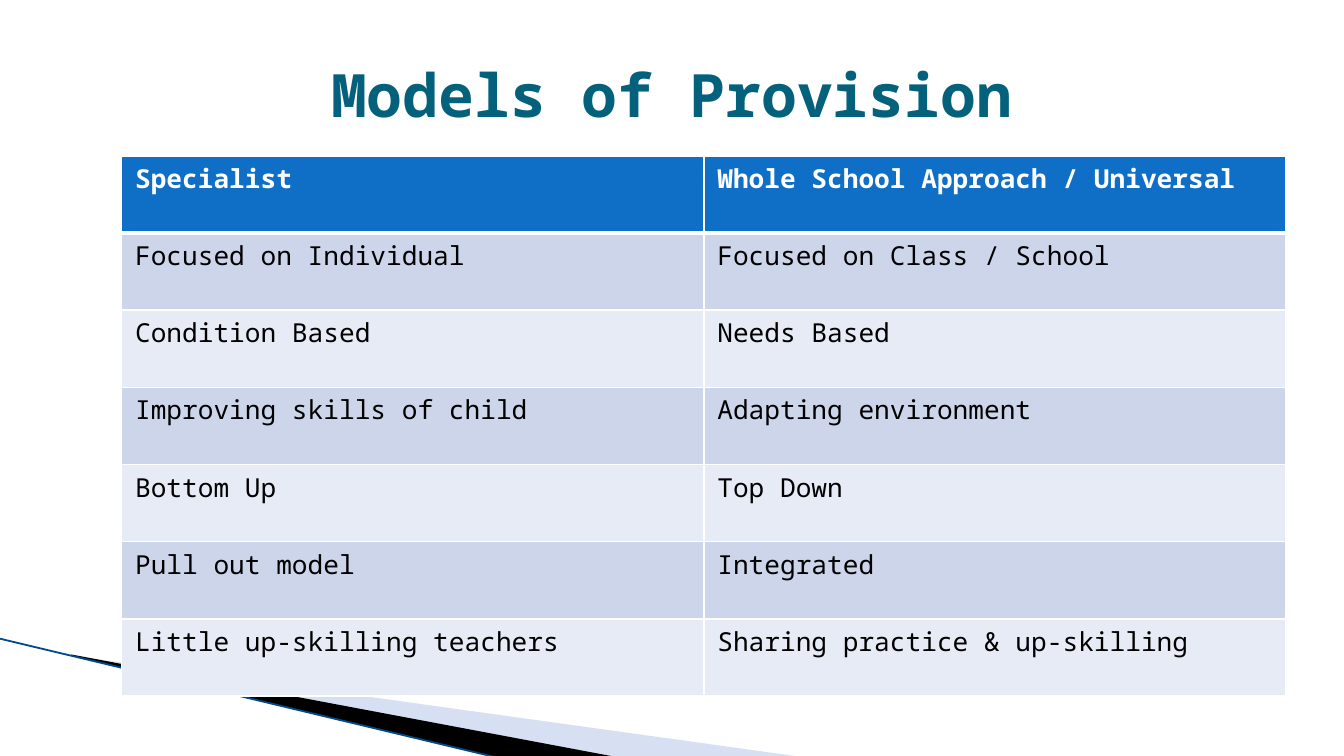
from dataclasses import dataclass
from typing import Any

from lxml import etree
from pptx import Presentation
from pptx import util as u
from pptx.dml.color import RGBColor
from pptx.enum import shapes, text
from pptx.oxml import ns

PX = 4572


@dataclass(frozen=True)
class Theme:
    font: str = "Noto Sans Mono"
    title: str = "04617B"
    header: str = "0F6FC6"
    bands: tuple[str, str] = ("CCD5EA", "E7EBF5")
    light: str = "FFFFFF"
    dark: str = "000000"
    wedge: str = "9DB2E1"
    edge: str = "004A8C"
    title_size: int = 32
    table_size: int = 14
    rule: int = 1
    header_rule: int = 3
    edge_width: float = 0.95


@dataclass(frozen=True)
class Box:
    left: int
    top: int
    width: int
    height: int

    def emu(self) -> tuple[int, ...]:
        return tuple(n * PX for n in (self.left, self.top, self.width, self.height))


@dataclass(frozen=True)
class Wedge:
    points: tuple[tuple[int, int], ...]
    color: str
    opacity: int = 100


@dataclass(frozen=True)
class Comparison:
    specialist: str
    universal: str


THEME = Theme()
WEDGES = (
    Wedge(((110, 976), (1190, 1126), (912, 1126)), THEME.wedge, 40),
    Wedge(((106, 974), (914, 1126), (744, 1128), (108, 976)), THEME.dark),
)
COMPARISONS = (
    Comparison("Specialist", "Whole School Approach / Universal"),
    Comparison("Focused on Individual", "Focused on Class / School"),
    Comparison("Condition Based", "Needs Based"),
    Comparison("Improving skills of child", "Adapting environment"),
    Comparison("Bottom Up", "Top Down"),
    Comparison("Pull out model", "Integrated"),
    Comparison("Little up-skilling teachers", "Sharing practice & up-skilling"),
)


def apply(target: Any, values: dict[str, Any]) -> None:
    for key, value in values.items():
        setattr(target, key, value)


def write(frame: Any, words: str, size: int, color: str, bold: bool) -> None:
    run = frame.paragraphs[0].add_run()
    run.text = words
    apply(run.font, {"name": THEME.font, "size": u.Pt(size), "bold": bold})
    run.font.color.rgb = RGBColor.from_string(color)


def paint(fill: Any, color: str) -> None:
    fill.solid()
    fill.fore_color.rgb = RGBColor.from_string(color)


def draw_wedge(slide: Any, wedge: Wedge) -> None:
    start, *rest = [(x * PX, y * PX) for x, y in wedge.points]
    builder = slide.shapes.build_freeform(*start, scale=1.0)
    builder.add_line_segments(rest, close=True)
    outline = builder.convert_to_shape()
    outline.shadow.inherit = False
    outline.line.fill.background()
    paint(outline.fill, wedge.color)
    if wedge.opacity < 100:
        tint = outline._element.spPr.find(".//" + ns.qn("a:srgbClr"))
        etree.SubElement(tint, ns.qn("a:alpha"), val=str(wedge.opacity * 1000))


def draw_edge(slide: Any) -> None:
    ends = [n * PX for n in (-2, 950, 742, 1128)]
    edge = slide.shapes.add_connector(shapes.MSO_CONNECTOR.STRAIGHT, *ends)
    edge.line.color.rgb = RGBColor.from_string(THEME.edge)
    edge.line.width = u.Pt(THEME.edge_width)
    etree.SubElement(edge._element.spPr, ns.qn("a:effectLst"))


def draw_title(slide: Any, words: str, box: Box) -> None:
    frame = slide.shapes.add_textbox(*box.emu()).text_frame
    apply(frame, {"word_wrap": True, "vertical_anchor": text.MSO_ANCHOR.MIDDLE})
    write(frame, words, THEME.title_size, THEME.title, True)
    frame.paragraphs[0].alignment = text.PP_ALIGN.CENTER


def add_border(cell: Any, side: str, width: int) -> None:
    props = cell._tc.get_or_add_tcPr()
    border = etree.SubElement(props, ns.qn(f"a:ln{side}"), w=str(u.Pt(width)))
    solid = etree.SubElement(border, ns.qn("a:solidFill"))
    etree.SubElement(solid, ns.qn("a:srgbClr"), val=THEME.light)


def draw_cell(cell: Any, words: str, row: int) -> None:
    is_header = row == 0
    apply(cell, {
        "margin_left": 20 * PX, "margin_right": 20 * PX,
        "margin_top": 7 * PX, "margin_bottom": 7 * PX,
    })
    widths = {
        "L": THEME.rule,
        "R": THEME.rule,
        "T": THEME.header_rule if row == 1 else THEME.rule,
        "B": THEME.header_rule if is_header else THEME.rule,
    }
    for side, width in widths.items():
        add_border(cell, side, width)
    paint(cell.fill, THEME.header if is_header else THEME.bands[(row - 1) % 2])
    color = THEME.light if is_header else THEME.dark
    write(cell.text_frame, words, THEME.table_size, color, is_header)


def draw_table(slide: Any, comparisons: tuple[Comparison, ...], box: Box) -> None:
    table = slide.shapes.add_table(len(comparisons), 2, *box.emu()).table
    for row, pair in enumerate(comparisons):
        for column, words in enumerate((pair.specialist, pair.universal)):
            draw_cell(table.cell(row, column), words, row)


def main() -> None:
    deck = Presentation()
    apply(deck, {"slide_width": 2000 * PX, "slide_height": 1125 * PX})
    slide = deck.slides.add_slide(deck.slide_layouts[6])
    paint(slide.background.fill, THEME.light)
    for wedge in WEDGES:
        draw_wedge(slide, wedge)
    draw_edge(slide)
    draw_title(slide, "Models of Provision", Box(100, 46, 1800, 188))
    draw_table(slide, COMPARISONS, Box(181, 232, 1733, 804))
    deck.save("out.pptx")


if __name__ == "__main__":
    main()
